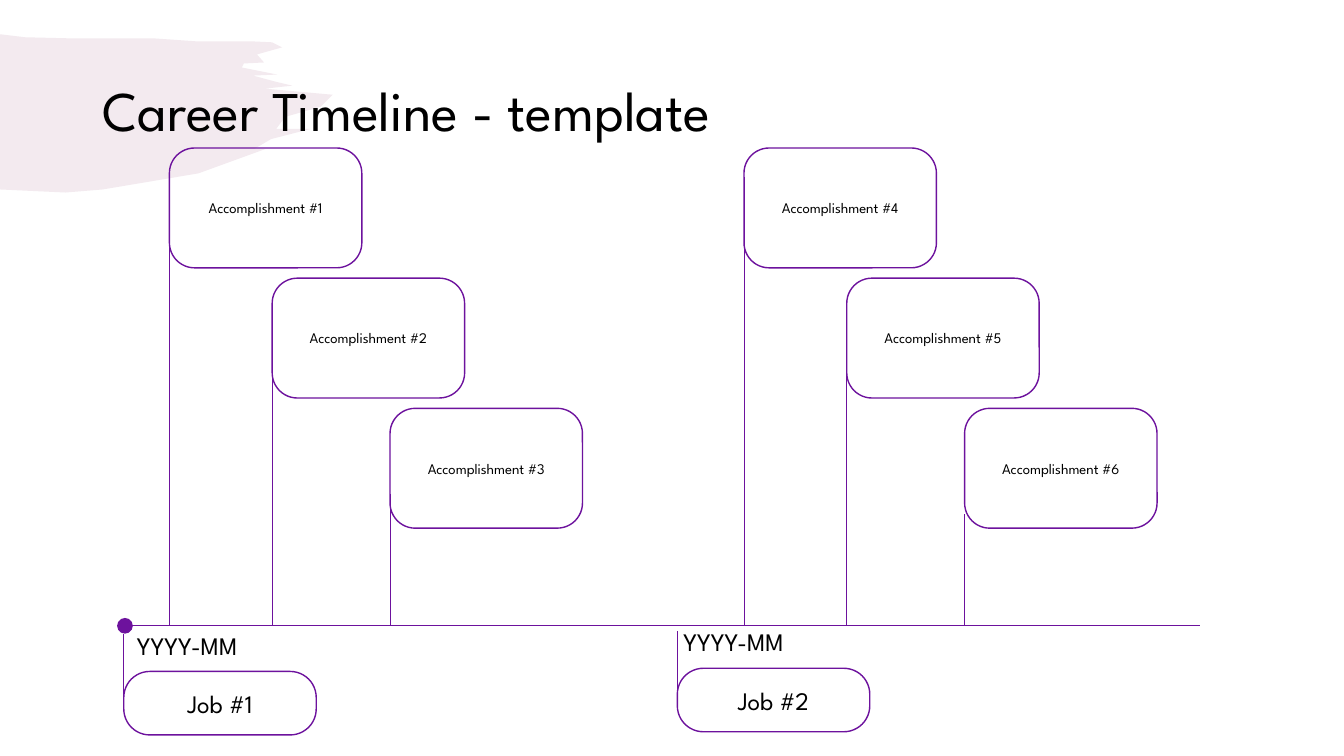
"""Build the career timeline slide."""
from dataclasses import dataclass

from lxml.etree import SubElement
from pptx import Presentation
from pptx.dml.color import RGBColor
from pptx.enum.shapes import MSO_CONNECTOR, MSO_SHAPE
from pptx.enum.text import MSO_ANCHOR, PP_ALIGN
from pptx.oxml.ns import qn
from pptx.util import Cm, Pt


@dataclass(frozen=True)
class Theme:
    """Colours, font and type sizes of the slide."""
    purple: RGBColor = RGBColor.from_string("6D129D")
    brush: RGBColor = RGBColor.from_string("C696B1")
    ink: RGBColor = RGBColor.from_string("000000")
    brush_opacity: int = 20
    font: str = "League Spartan"
    title: float = 40
    heading: float = 18
    label: float = 10.5
    outline: float = 1
    hairline: float = 0.5


THEME = Theme()
BOX_WIDTH, BOX_HEIGHT, JOB_HEIGHT = 4.85, 3.02, 1.6
AXIS_LEFT, AXIS_RIGHT, AXIS_Y = 2.97, 30.23, 15.77
DOT_SIZE = 0.36
FIRST_BOX_TOP, BOX_STEP = 3.73, 3.28
BOX_LEFTS = (4.27, 6.86, 9.83)
GROUP_SHIFT = 14.48
JOBS = (
    {"job": "Job #1", "at": (3.12, 16.92), "date": (3.2, 15.75),
     "stem_tops": (4.47, 7.67, 12.45)},
    {"job": "Job #2", "at": (17.07, 16.84), "date": (16.97, 15.67),
     "stem_tops": (4.47, 7.67, 12.95)},
)
BRUSH_OUTLINE = (
    (0, 34), (25, 37), (66, 38), (151, 38), (194, 41), (248, 41), (270, 42),
    (280, 47), (255, 54), (262, 62), (242, 63), (240, 67), (275, 74),
    (251, 75), (273, 81), (290, 85), (263, 88), (330, 94), (318, 106),
    (283, 116), (274, 128), (308, 128), (269, 138), (252, 148), (263, 148),
    (197, 172), (102, 188), (65, 191), (0, 188),
)


def apply_format(target, values):
    """Set every attribute named in values on target."""
    for name, value in values.items():
        setattr(target, name, value)


def write_text(box, text, size, frame_format, para_format):
    """Put one styled paragraph into a shape."""
    apply_format(box.text_frame, frame_format)
    para = box.text_frame.paragraphs[0]
    apply_format(para, para_format)
    span = para.add_run()
    span.text = text
    apply_format(span.font, {"name": THEME.font, "size": Pt(size)})
    span.font.color.rgb = THEME.ink


def add_text(page, text, size, bounds, frame_format, para_format):
    """Add a text box at bounds given in centimetres."""
    box = page.shapes.add_textbox(*map(Cm, bounds))
    write_text(box, text, size, frame_format, para_format)


def add_outlined(page, kind, bounds):
    """Add a preset shape with the purple outline and no fill."""
    shape = page.shapes.add_shape(kind, *map(Cm, bounds))
    shape.shadow.inherit = False
    shape.fill.background()
    shape.line.color.rgb = THEME.purple
    shape.line.width = Pt(THEME.outline)
    return shape


def add_box(page, text, size, bounds, corner):
    """Add a rounded box with centred text."""
    box = add_outlined(page, MSO_SHAPE.ROUNDED_RECTANGLE, bounds)
    box.adjustments[0] = corner
    write_text(box, text, size,
               {"word_wrap": True, "vertical_anchor": MSO_ANCHOR.MIDDLE},
               {"alignment": PP_ALIGN.CENTER})


def add_line(page, *ends):
    """Add a thin purple line between two points in centimetres."""
    line = page.shapes.add_connector(MSO_CONNECTOR.STRAIGHT, *map(Cm, ends))
    line.line.color.rgb = THEME.purple
    line.line.width = Pt(THEME.hairline)
    SubElement(line._element.spPr, qn("a:effectLst"))


def add_brush(page):
    """Add the translucent brush stroke behind the title."""
    start, *rest = BRUSH_OUTLINE
    builder = page.shapes.build_freeform(*start, scale=Cm(2.54) / 100)
    builder.add_line_segments(rest)
    stroke = builder.convert_to_shape()
    stroke.shadow.inherit = False
    stroke.line.fill.background()
    stroke.fill.solid()
    stroke.fill.fore_color.rgb = THEME.brush
    color = stroke._element.spPr.find(qn("a:solidFill"))[0]
    SubElement(color, qn("a:alpha"), val=f"{THEME.brush_opacity}000")


def add_axis(page):
    """Add the time axis with its starting dot."""
    add_line(page, AXIS_LEFT, AXIS_Y, AXIS_RIGHT, AXIS_Y)
    dot = add_outlined(page, MSO_SHAPE.OVAL, (
        AXIS_LEFT, AXIS_Y - DOT_SIZE / 2, DOT_SIZE, DOT_SIZE))
    dot.fill.solid()
    dot.fill.fore_color.rgb = THEME.purple


def add_accomplishments(page, stem_tops, group_index):
    """Add the stems and staggered boxes of one job."""
    lefts = [left + group_index * GROUP_SHIFT for left in BOX_LEFTS]
    first_number = 1 + group_index * len(BOX_LEFTS)
    for left, top in zip(lefts, stem_tops):
        add_line(page, left, AXIS_Y, left, top)
    for index, left in enumerate(lefts):
        top = FIRST_BOX_TOP + index * BOX_STEP
        add_box(page, f"Accomplishment #{first_number + index}", THEME.label,
                (left, top, BOX_WIDTH, BOX_HEIGHT), 0.21)


def add_job(page, group):
    """Add the job box, its stem and its date."""
    left, top = group["at"]
    add_box(page, group["job"], THEME.heading,
            (left, top, BOX_WIDTH, JOB_HEIGHT), 0.41)
    add_line(page, left, top + 0.97, left, top - 0.94)
    add_text(page, "YYYY-MM", THEME.heading, (*group["date"], 3.4, 1.02),
             {"word_wrap": False}, {})


def main():
    """Build and save the deck."""
    deck = Presentation()
    apply_format(deck, {"slide_width": Cm(33.87), "slide_height": Cm(19.05)})
    page = deck.slides.add_slide(deck.slide_layouts[6])
    add_brush(page)
    add_text(page, "Career Timeline - template", THEME.title,
             (2.34, 1.02, 29.2, 3.68),
             {"word_wrap": True, "vertical_anchor": MSO_ANCHOR.MIDDLE},
             {"line_spacing": 0.9})
    add_axis(page)
    for index, group in enumerate(JOBS):
        add_accomplishments(page, group["stem_tops"], index)
        add_job(page, group)
    deck.save("out.pptx")


if __name__ == "__main__":
    main()
